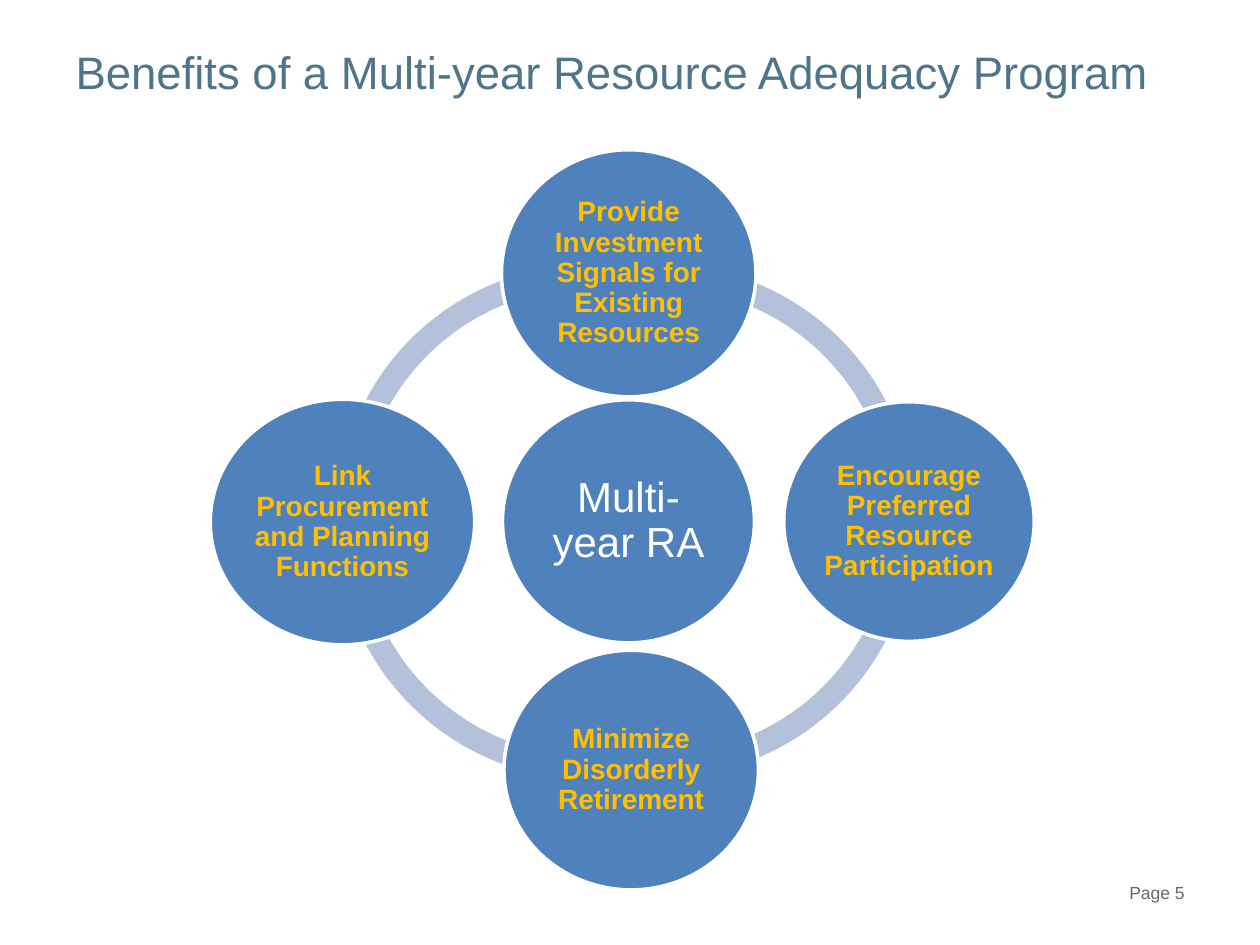
from pptx import Presentation
from pptx.dml.color import RGBColor
from pptx.enum.shapes import MSO_SHAPE
from pptx.enum.text import MSO_ANCHOR, PP_ALIGN
from pptx.util import Cm, Pt

ARC, ELLIPSE = MSO_SHAPE.BLOCK_ARC, MSO_SHAPE.OVAL
TOP, MIDDLE = MSO_ANCHOR.TOP, MSO_ANCHOR.MIDDLE
LEFT, CENTER, RIGHT = PP_ALIGN.LEFT, PP_ALIGN.CENTER, PP_ALIGN.RIGHT
TITLE_ONLY = 5
ARC_SIZE = 10.26
ARC_THICKNESS = 0.046
DEGREE = 0.6

RING_ARCS = [
    (2.54, 2.31, 180, 278),
    (2.54, 2.44, 82, 180),
    (3.94, 2.39, 0, 98),
    (3.94, 2.31, 262, 0),
]
HUB = ("Multi-year RA", 5.89, 5.04, 5.08, 4.9)
BENEFITS = [
    ("Provide Investment Signals for Existing Resources", 5.87, 0, 5.13, 4.98),
    ("Encourage Preferred Resource Participation", 11.56, 5.08, 5.05, 4.83),
    ("Minimize Disorderly Retirement", 5.92, 10.09, 5.13, 4.83),
    ("Link Procurement and Planning Functions", 0, 5.03, 5.33, 4.95),
]


def color(hex_code):
    """Return the colour for a hex string."""
    return RGBColor.from_string(hex_code)


def write(frame, text, size, hex_code, align, anchor, bold=False):
    """Write one formatted paragraph into a text frame."""
    frame.word_wrap = True
    frame.vertical_anchor = anchor
    frame.text = text
    paragraph = frame.paragraphs[0]
    paragraph.alignment = align
    font = paragraph.runs[0].font
    font.name, font.size, font.bold = "Arial", Pt(size), bold
    font.color.rgb = color(hex_code)
    return paragraph


def add_filled(shapes, preset, box, fill):
    """Add a preset shape with a plain fill and no shadow."""
    shape = shapes.add_shape(preset, *(Cm(length) for length in box))
    shape.shadow.inherit = False
    shape.fill.solid()
    shape.fill.fore_color.rgb = color(fill)
    return shape


def add_circle(shapes, box, text, size, hex_code, inset, bold):
    """Add a white-edged circle with its label."""
    circle = add_filled(shapes, ELLIPSE, box, "4F81BD")
    circle.line.color.rgb = color("FFFFFF")
    circle.line.width = Pt(2)
    frame = circle.text_frame
    frame.margin_left = frame.margin_right = Cm(inset)
    frame.margin_top = frame.margin_bottom = Cm(inset)
    label = write(frame, text, size, hex_code, CENTER, MIDDLE, bold)
    label.line_spacing = 0.9


def add_cycle(slide, left, top):
    """Draw the ring, the hub and the benefits around it."""
    shapes = slide.shapes.add_group_shape().shapes
    for x, y, start, end in RING_ARCS:
        box = (left + x, top + y, ARC_SIZE, ARC_SIZE)
        arc = add_filled(shapes, ARC, box, "B3C1DB")
        arc.line.fill.background()
        arc.adjustments[0] = start * DEGREE
        arc.adjustments[1] = end * DEGREE
        arc.adjustments[2] = ARC_THICKNESS
    text, x, y, width, height = HUB
    add_circle(shapes, (left + x, top + y, width, height), text, 24, "FFFFFF", 0.08, False)
    for text, x, y, width, height in BENEFITS:
        add_circle(shapes, (left + x, top + y, width, height), text, 16, "FFC000", 0.05, True)


def set_title(slide, left, top, width, height):
    """Place and format the slide title."""
    title = slide.shapes.title
    title.left, title.top, title.width, title.height = map(Cm, (left, top, width, height))
    write(title.text_frame, "Benefits of a Multi-year Resource Adequacy Program",
          26, "4F758B", LEFT, TOP)


def add_page_number(slide, left, top, width, height):
    """Add the page number at the foot."""
    page = slide.shapes.add_textbox(*map(Cm, (left, top, width, height)))
    write(page.text_frame, "Page 5", 10, "686868", RIGHT, TOP)


def main():
    """Build and save the slide."""
    deck = Presentation()
    deck.slide_width, deck.slide_height = Cm(25.4), Cm(19.05)
    slide = deck.slides.add_slide(deck.slide_layouts[TITLE_ONLY])
    set_title(slide, 1.27, 0.76, 22.86, 3.18)
    add_cycle(slide, 4.24, 3.02)
    add_page_number(slide, 18.21, 17.65, 5.92, 1.02)
    deck.save("out.pptx")


if __name__ == "__main__":
    main()
